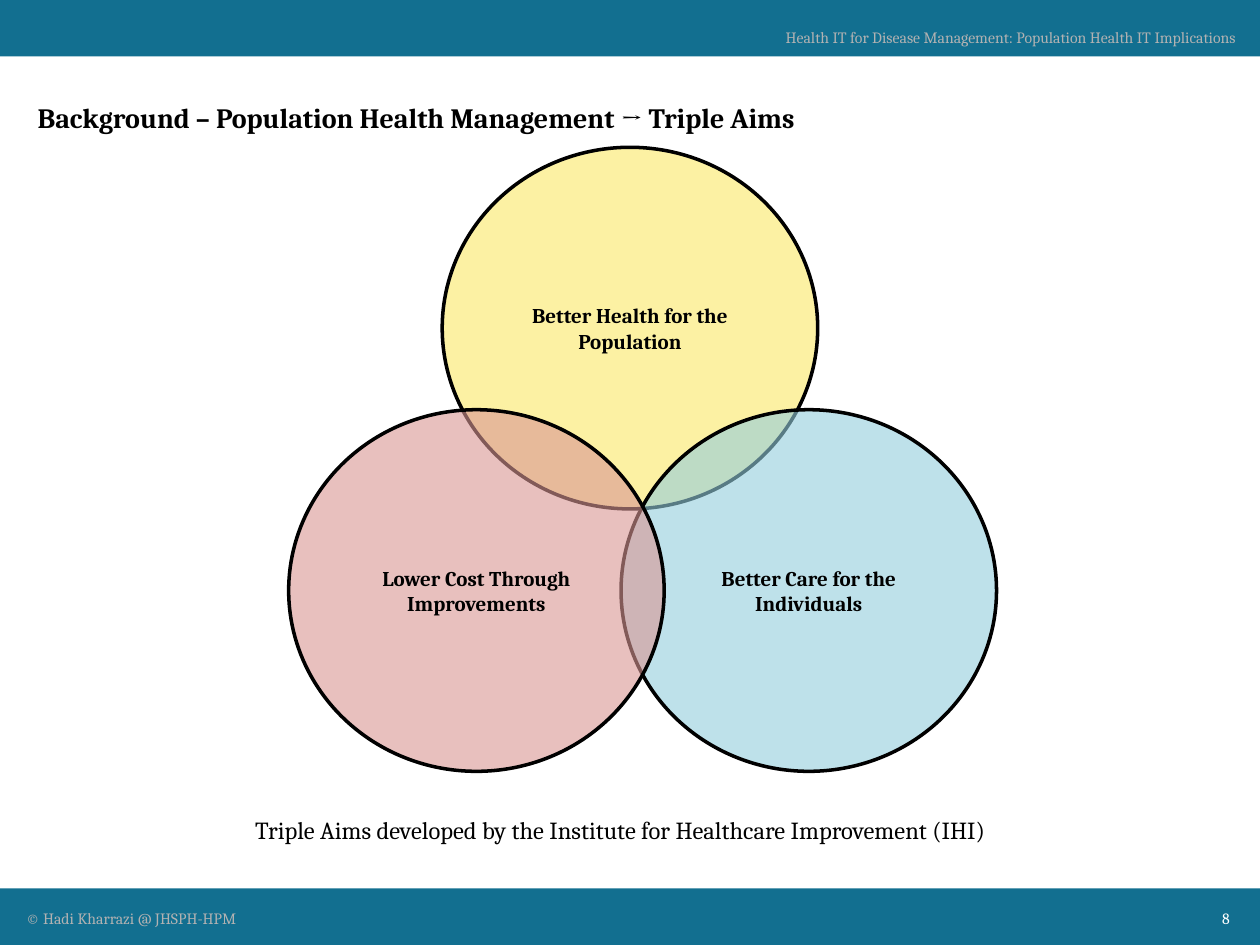
from lxml.etree import SubElement
from pptx import Presentation
from pptx.dml.color import RGBColor
from pptx.enum.shapes import MSO_SHAPE
from pptx.enum.text import MSO_ANCHOR, PP_ALIGN
from pptx.oxml.ns import qn
from pptx.util import Cm, Pt

COLORS = {
    "band": "126F90",
    "muted": "B2B2B2",
    "black": "000000",
    "white": "FFFFFF",
    "population": "FAE866",
    "care": "93CDDD",
    "cost": "D99694",
}
SLIDE_WIDTH, SLIDE_HEIGHT = 25.4, 19.05
BAND_HEIGHT = 1.14
CIRCLE_WIDTH, CIRCLE_HEIGHT = 7.57, 7.29
LOWER_ROW_TOP = 8.26
FOOTER_TOP, SMALL_HEIGHT = 18.19, 0.64


def rgb(name):
    return RGBColor.from_string(COLORS[name])


def write_text(frame, wording, size, color="black", bold=False,
               align=PP_ALIGN.LEFT, anchor=MSO_ANCHOR.TOP):
    for name, value in {"word_wrap": True, "vertical_anchor": anchor}.items():
        setattr(frame, name, value)
    paragraph = frame.paragraphs[0]
    paragraph.alignment = align
    run = paragraph.add_run()
    run.text = wording
    font_format = {"name": "Cambria", "size": Pt(size), "bold": bold}
    for name, value in font_format.items():
        setattr(run.font, name, value)
    run.font.color.rgb = rgb(color)


def add_label(slide, box, wording, size, **text_format):
    label = slide.shapes.add_textbox(*map(Cm, box))
    write_text(label.text_frame, wording, size, **text_format)


def add_filled(slide, preset, box, color):
    filled = slide.shapes.add_shape(preset, *map(Cm, box))
    filled.shadow.inherit = False
    filled.fill.solid()
    filled.fill.fore_color.rgb = rgb(color)
    return filled


def add_band(slide, top):
    band = add_filled(slide, MSO_SHAPE.RECTANGLE,
                      (0, top, SLIDE_WIDTH, BAND_HEIGHT), "band")
    band.line.fill.background()


def add_aim(slide, left, top, color, wording):
    aim = add_filled(slide, MSO_SHAPE.OVAL,
                     (left, top, CIRCLE_WIDTH, CIRCLE_HEIGHT), color)
    aim.line.color.rgb = rgb("black")
    aim.line.width = Pt(2)
    # 60 % opacity lets the overlaps show
    for fill_color in aim.fill._xPr.find(qn("a:solidFill")):
        SubElement(fill_color, qn("a:alpha"), val="60000")
    write_text(aim.text_frame, wording, 12, bold=True,
               align=PP_ALIGN.CENTER, anchor=MSO_ANCHOR.MIDDLE)


def main():
    deck = Presentation()
    deck.slide_width, deck.slide_height = Cm(SLIDE_WIDTH), Cm(SLIDE_HEIGHT)
    slide = deck.slides.add_slide(deck.slide_layouts[6])

    # Header and footer bands
    for top in (0, SLIDE_HEIGHT - BAND_HEIGHT):
        add_band(slide, top)
    add_label(slide, (0.28, FOOTER_TOP, 15.77, SMALL_HEIGHT),
              "© Hadi Kharrazi @ JHSPH-HPM", 9, color="muted")
    add_label(slide, (14.58, 0.43, 10.57, SMALL_HEIGHT),
              "Health IT for Disease Management: Population Health IT Implications",
              9, color="muted", align=PP_ALIGN.RIGHT)

    # Title and caption
    add_label(slide, (0.51, 1.78, 24.41, 1.17),
              "Background – Population Health Management → Triple Aims",
              16, bold=True, anchor=MSO_ANCHOR.MIDDLE)
    add_label(slide, (3.66, 16.31, 17.7, 0.86),
              "Triple Aims developed by the Institute for Healthcare Improvement (IHI)",
              14, align=PP_ALIGN.CENTER)

    # Three overlapping aims
    aims = [
        ((SLIDE_WIDTH - CIRCLE_WIDTH) / 2, 2.97, "population",
         "Better Health for the Population"),
        (12.52, LOWER_ROW_TOP, "care", "Better Care for the Individuals"),
        (5.82, LOWER_ROW_TOP, "cost", "Lower Cost Through Improvements"),
    ]
    for aim in aims:
        add_aim(slide, *aim)

    # Page number
    add_label(slide, (23.39, FOOTER_TOP, 1.65, SMALL_HEIGHT), "8", 9,
              color="white", align=PP_ALIGN.RIGHT)

    deck.save("out.pptx")


if __name__ == "__main__":
    main()
